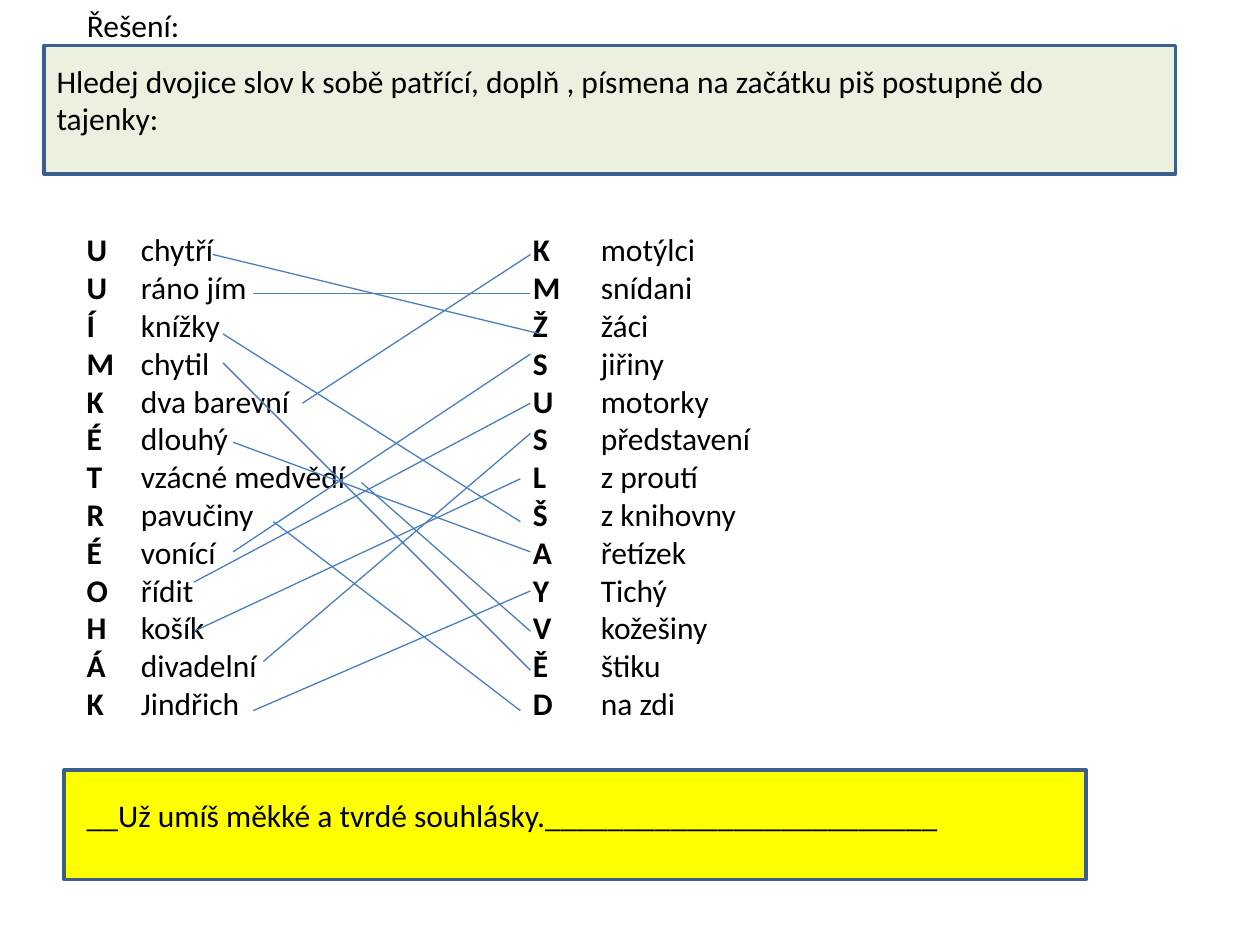
from lxml.etree import SubElement
from pptx import Presentation
from pptx.dml.color import RGBColor
from pptx.enum.shapes import MSO_CONNECTOR, MSO_SHAPE
from pptx.enum.text import MSO_ANCHOR, MSO_AUTO_SIZE, PP_ALIGN
from pptx.oxml.ns import qn
from pptx.util import Inches, Pt

COLORS = {"text": "000000", "task": "EBF1DE", "answer": "FFFF00",
          "border": "3A5F8C", "match": "4B7EBC"}
FONT = "Calibri"
TITLE = "Řešení:"
TASK = ("Hledej dvojice slov k sobě patřící, doplň , písmena na začátku "
        "piš postupně do tajenky:")
ANSWER = "__Už umíš měkké a tvrdé souhlásky._________________________"

PANELS = [("answer", (0.51, 6.11, 8.11, 0.87)), ("task", (0.35, 0.36, 8.98, 1.02))]
SENTENCES = [(TASK, (0.35, 0.44, 8.58, 0.71)), (ANSWER, (0.59, 6.27, 8.27, 0.4))]
TITLE_BOX = (0.59, 0, 1.02, 0.4)

LEFT_WORDS = [
    ("U", "chytří"), ("U", "ráno jím"), ("Í", "knížky"), ("M", "chytil"),
    ("K", "dva barevní"), ("É", "dlouhý"), ("T", "vzácné medvědí"),
    ("R", "pavučiny"), ("É", "vonící"), ("O", "řídit"), ("H", "košík"),
    ("Á", "divadelní"), ("K", "Jindřich"),
]
RIGHT_WORDS = [
    ("K", "motýlci"), ("M", "snídani"), ("Ž", "žáci"), ("S", "jiřiny"),
    ("U", "motorky"), ("S", "představení"), ("L", "z proutí"),
    ("Š", "z knihovny"), ("A", "řetízek"), ("Y", "Tichý"),
    ("V", "kožešiny"), ("Ě", "štiku"), ("D", "na zdi"),
]
COLUMNS = [(LEFT_WORDS, (0.59, 1.78, 2.83, 4.04), 0.43),
           (RIGHT_WORDS, (4.13, 1.78, 2.68, 4.04), 0.54)]

MATCHES = [
    (1.69, 2.02, 4.29, 2.65), (2.01, 2.33, 4.21, 2.33), (1.77, 2.65, 4.13, 4.14),
    (1.77, 2.88, 4.21, 5.32), (2.4, 3.2, 4.21, 2.02), (1.85, 3.51, 4.21, 4.38),
    (2.87, 3.83, 4.21, 5.01), (2.17, 4.14, 4.13, 5.64), (1.85, 4.38, 4.21, 2.81),
    (1.54, 4.62, 4.21, 3.2), (1.54, 5.01, 4.13, 3.8), (2.09, 5.25, 4.21, 3.44),
    (2.01, 5.64, 4.21, 4.69),
]


def color(name):
    return RGBColor.from_string(COLORS[name])


def inches(values):
    return [Inches(value) for value in values]


def add_run(paragraph, text, bold=False):
    run = paragraph.add_run()
    run.text = text
    run.font.name = FONT
    run.font.size = Pt(18)
    run.font.bold = bold
    run.font.color.rgb = color("text")


def add_panel(slide, fill, box):
    panel = slide.shapes.add_shape(MSO_SHAPE.RECTANGLE, *inches(box))
    panel.shadow.inherit = False
    panel.fill.solid()
    panel.fill.fore_color.rgb = color(fill)
    panel.line.color.rgb = color("border")
    panel.line.width = Pt(2)


def add_text_box(slide, box):
    frame = slide.shapes.add_textbox(*inches(box)).text_frame
    frame.word_wrap = True
    return frame


def add_column(slide, words, box, tab):
    frame = add_text_box(slide, box)
    for index, (letter, word) in enumerate(words):
        paragraph = frame.add_paragraph() if index else frame.paragraphs[0]
        tabs = SubElement(paragraph._p.get_or_add_pPr(), qn("a:tabLst"))
        SubElement(tabs, qn("a:tab"), pos=str(Inches(tab)), algn="l")
        add_run(paragraph, letter, bold=True)
        add_run(paragraph, "\t" + word)


def add_match(slide, ends):
    connector = slide.shapes.add_connector(MSO_CONNECTOR.STRAIGHT, *inches(ends))
    connector.line.color.rgb = color("match")
    connector.line.width = Pt(0.75)
    SubElement(connector._element.spPr, qn("a:effectLst"))


def add_title(slide):
    title = slide.shapes.title
    title.left, title.top, title.width, title.height = inches(TITLE_BOX)
    frame = title.text_frame
    frame.word_wrap = True
    frame.auto_size = MSO_AUTO_SIZE.NONE
    frame.vertical_anchor = MSO_ANCHOR.TOP
    frame.paragraphs[0].alignment = PP_ALIGN.LEFT
    add_run(frame.paragraphs[0], TITLE)


def main():
    """Build the word-matching solution slide."""
    presentation = Presentation()
    presentation.slide_width, presentation.slide_height = inches((10, 7.5))
    slide = presentation.slides.add_slide(presentation.slide_layouts[5])
    add_title(slide)
    for fill, box in PANELS:
        add_panel(slide, fill, box)
    for sentence, box in SENTENCES:
        add_run(add_text_box(slide, box).paragraphs[0], sentence)
    for words, box, tab in COLUMNS:
        add_column(slide, words, box, tab)
    for ends in MATCHES:
        add_match(slide, ends)
    presentation.save("out.pptx")


if __name__ == "__main__":
    main()
